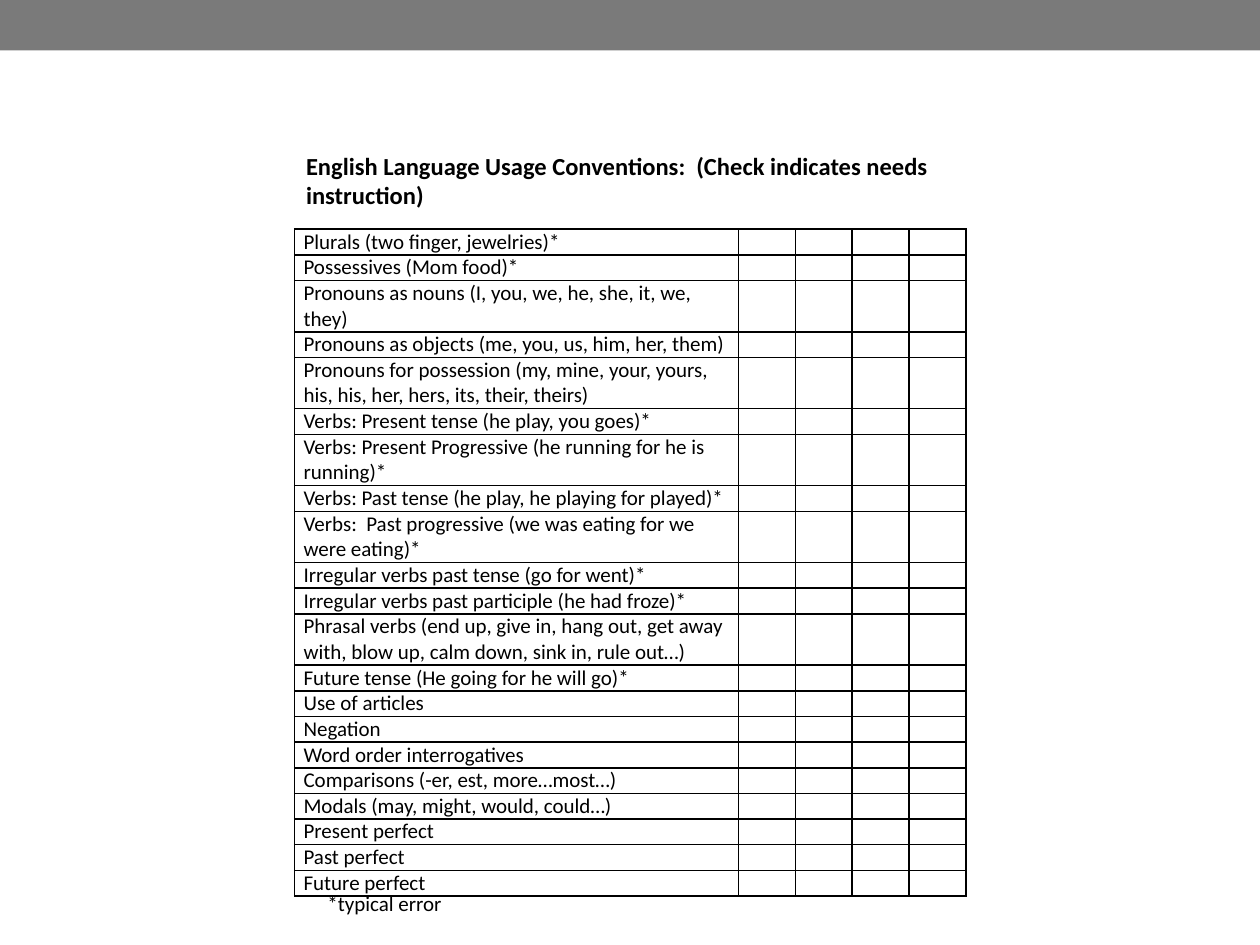
from dataclasses import dataclass

import lxml.etree
import pptx
import pptx.dml.color
import pptx.enum.shapes
import pptx.enum.text
import pptx.oxml.ns
import pptx.util

Cm = pptx.util.Cm
COLOURS = {"band": "7A7A7A", "ink": "000000"}
FONT = "Calibri"
BODY_SIZE = 12
LINE_HEIGHT = 0.517
CHECK_COLUMNS = 4
COLUMN_WIDTHS = [8.95] + [1.145] * CHECK_COLUMNS
BORDER_SIDES = ("a:lnL", "a:lnR", "a:lnT", "a:lnB")


@dataclass
class Label:
    text: str
    left: float
    top: float
    width: float
    height: float
    size: int
    bold: bool = False


@dataclass
class Convention:
    text: str
    lines: int = 1


LABELS = [
    Label("English Language Usage Conventions:  (Check indicates needs instruction)",
          5.92, 2.92, 13.56, 2.06, 14, True),
    Label("*typical error", 6.35, 17.83, 3.18, 0.76, BODY_SIZE),
]

CONVENTIONS = [
    Convention("Plurals (two finger, jewelries)*"),
    Convention("Possessives (Mom food)*"),
    Convention("Pronouns as nouns (I, you, we, he, she, it, we, they)", 2),
    Convention("Pronouns as objects (me, you, us, him, her, them)"),
    Convention("Pronouns for possession (my, mine, your, yours, his, his, her, hers, its, their, theirs)", 2),
    Convention("Verbs: Present tense (he play, you goes)*"),
    Convention("Verbs: Present Progressive (he running for he is running)*", 2),
    Convention("Verbs: Past tense (he play, he playing for played)*"),
    Convention("Verbs:  Past progressive (we was eating for we were eating)*", 2),
    Convention("Irregular verbs past tense (go for went)*"),
    Convention("Irregular verbs past participle (he had froze)*"),
    Convention("Phrasal verbs (end up, give in, hang out, get away with, blow up, calm down, sink in, rule out…)", 2),
    Convention("Future tense (He going for he will go)*"),
    Convention("Use of articles"),
    Convention("Negation"),
    Convention("Word order interrogatives"),
    Convention("Comparisons (-er, est, more…most…)"),
    Convention("Modals (may, might, would, could…)"),
    Convention("Present perfect"),
    Convention("Past perfect"),
    Convention("Future perfect"),
]


def colour(name: str) -> pptx.dml.color.RGBColor:
    return pptx.dml.color.RGBColor.from_string(COLOURS[name])


def apply_format(target, values: dict) -> None:
    for name, value in values.items():
        setattr(target, name, value)


def add_child(parent, tag: str, **attributes: str):
    return lxml.etree.SubElement(parent, pptx.oxml.ns.qn(tag), attributes)


def write_span(para, text: str, size: int, bold: bool = False) -> None:
    span = para.add_run()
    span.text = text
    apply_format(span.font, {"name": FONT, "size": pptx.util.Pt(size), "bold": bold})
    span.font.color.rgb = colour("ink")


def draw_band(page, width: int) -> None:
    band = page.shapes.add_shape(
        pptx.enum.shapes.MSO_SHAPE.RECTANGLE, 0, 0, width, Cm(1.02))
    band.shadow.inherit = False
    band.fill.solid()
    band.fill.fore_color.rgb = colour("band")
    band.line.fill.background()


def draw_label(page, label: Label) -> None:
    box = page.shapes.add_textbox(
        Cm(label.left), Cm(label.top), Cm(label.width), Cm(label.height))
    apply_format(box.text_frame, {
        "word_wrap": True,
        "vertical_anchor": pptx.enum.text.MSO_ANCHOR.TOP,
    })
    write_span(box.text_frame.paragraphs[0], label.text, label.size, label.bold)


def style_cell(cell) -> None:
    apply_format(cell, {
        "margin_left": Cm(0.18), "margin_right": Cm(0.18),
        "margin_top": 0, "margin_bottom": 0,
    })
    properties = cell._tc.get_or_add_tcPr()
    for side in BORDER_SIDES:
        border = add_child(properties, side, w=str(pptx.util.Pt(1)))
        fill = add_child(border, "a:solidFill")
        add_child(fill, "a:srgbClr", val=COLOURS["ink"])
    cell.fill.background()


def draw_checklist(page, conventions: list[Convention]) -> None:
    total_lines = sum(item.lines for item in conventions)
    frame = page.shapes.add_table(
        len(conventions), len(COLUMN_WIDTHS), Cm(5.94), Cm(4.62),
        Cm(sum(COLUMN_WIDTHS)), Cm(LINE_HEIGHT * total_lines))
    table = frame.table
    apply_format(table, {"first_row": False, "horz_banding": False})
    for column, width in zip(table.columns, COLUMN_WIDTHS):
        column.width = Cm(width)
    for row, item in zip(table.rows, conventions):
        row.height = Cm(LINE_HEIGHT * item.lines)
        for index, cell in enumerate(row.cells):
            style_cell(cell)
            para = cell.text_frame.paragraphs[0]
            if index == 0:
                write_span(para, item.text, BODY_SIZE)
            else:
                add_child(para._p, "a:endParaRPr", sz=str(BODY_SIZE * 100))


def main() -> None:
    deck = pptx.Presentation()
    apply_format(deck, {"slide_width": Cm(25.4), "slide_height": Cm(19.05)})
    page = deck.slides.add_slide(deck.slide_layouts[6])
    draw_band(page, deck.slide_width)
    draw_checklist(page, CONVENTIONS)
    for label in LABELS:
        draw_label(page, label)
    deck.save("out.pptx")


if __name__ == "__main__":
    main()
